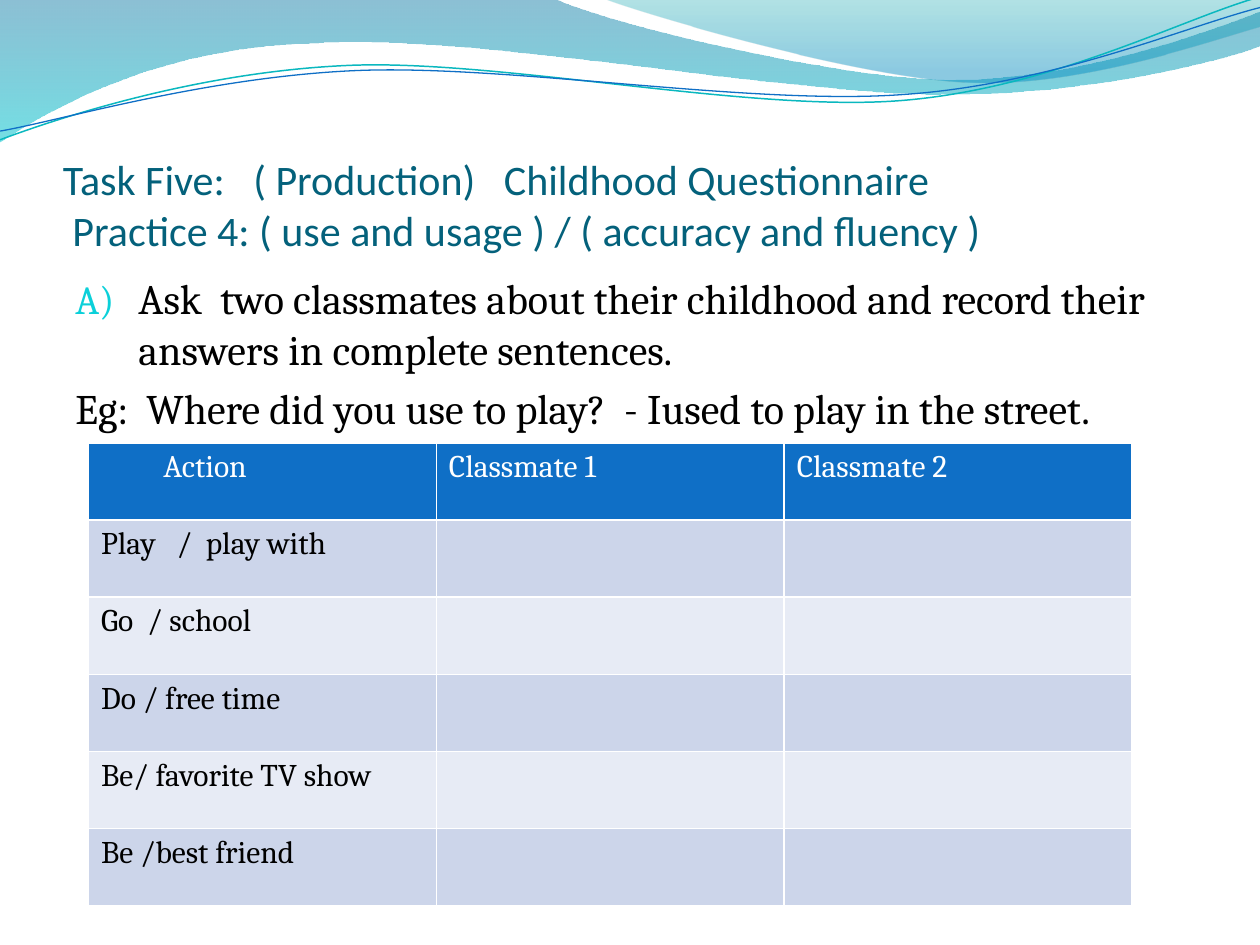
from lxml.etree import SubElement
from pptx import Presentation
from pptx.dml.color import RGBColor as Rgb
from pptx.enum.text import MSO_ANCHOR as Anchor
from pptx.oxml.ns import qn
from pptx.util import Pt

COLORS = {
    "title": "04617B", "ink": "000000", "white": "FFFFFF", "number": "0BD0D9",
    "header": "0F6FC6", "odd": "CCD5EA", "even": "E7EBF5", "teal": "0AB8BF",
    "deep_blue": "0074A1", "cyan": "00C6CF", "sea": "00A1A9", "sky": "008BBF",
}


def write(paragraph, text, font="Cambria", size=24, color="ink"):
    """Fill a paragraph with formatted text; a vertical tab breaks the line."""
    paragraph.text = text
    for run in paragraph.runs:
        run.font.name, run.font.size = font, Pt(size)
        run.font.color.rgb = Rgb.from_string(COLORS[color])


class Board:
    """Holds the style and the current slide, and draws each kind of element."""

    def __init__(self, slide, colors):
        self.slide, self.colors = slide, colors

    def rgb(self, name):
        return Rgb.from_string(self.colors[name])

    def outline(self, start, segments, close):
        """Draw lines (one point each) and cubic curves (three points each)."""
        builder = self.slide.shapes.build_freeform(*map(Pt, start), scale=1.0)
        builder.add_line_segments(
            [(Pt(x), Pt(y)) for segment in segments for x, y in segment], close=close)
        shape = builder.convert_to_shape()
        shape.shadow.inherit = False
        vertices = iter(list(shape._element.iter(qn("a:lnTo"))))
        for segment in segments:
            first, *others = [next(vertices) for _ in segment]
            if others:
                first.tag = qn("a:cubicBezTo")
            for vertex in others:
                first.append(vertex[0])
                vertex.getparent().remove(vertex)
        return shape

    def wave(self, start, segments, stops):
        shape = self.outline(start, segments, True)
        shape.line.fill.background()
        shape.fill.gradient()
        shape.fill.gradient_angle = 270
        for stop, (position, color, alpha) in zip(shape.fill.gradient_stops, stops):
            stop.position = position
            stop.color.rgb = self.rgb(color)
            hue = stop._gs.find(qn("a:srgbClr"))
            SubElement(hue, qn("a:alpha"), val=str(alpha * 1000))

    def strand(self, start, segments, color, width):
        shape = self.outline(start, segments, False)
        shape.fill.background()
        shape.line.color.rgb = self.rgb(color)
        shape.line.width = Pt(width)

    def text_box(self, left, top, width, height):
        frame = self.slide.shapes.add_textbox(Pt(left), Pt(top), Pt(width), Pt(height)).text_frame
        frame.word_wrap = True
        return frame

    def title(self, text, *place):
        frame = self.text_box(*place)
        frame.vertical_anchor = Anchor.BOTTOM
        frame.margin_left = frame.margin_right = frame.margin_bottom = Pt(0)
        write(frame.paragraphs[0], text, font="Calibri", color="title")

    def instructions(self, items, *place):
        frame = self.text_box(*place)
        for index, (text, numbered) in enumerate(items):
            paragraph = frame.add_paragraph() if index else frame.paragraphs[0]
            write(paragraph, text)
            paragraph.space_before = Pt(4.8)
            props = paragraph._p.get_or_add_pPr()
            props.set("marL", str(Pt(36)))
            props.set("indent", str(Pt(-36)))
            if numbered:
                tint = SubElement(props, qn("a:buClr"))
                SubElement(tint, qn("a:srgbClr"), val=self.colors["number"])
                SubElement(props, qn("a:buSzPct"), val="95000")
                SubElement(props, qn("a:buAutoNum"), type="alphaUcParenR")

    def border(self, cell):
        props = cell._tc.get_or_add_tcPr()
        for side in "LRTB":
            edge = SubElement(props, qn(f"a:ln{side}"), w=str(Pt(1)))
            paint = SubElement(edge, qn("a:solidFill"))
            SubElement(paint, qn("a:srgbClr"), val=self.colors["white"])

    def questionnaire(self, headings, actions, *place):
        rows = [headings] + [(action, "", "") for action in actions]
        table = self.slide.shapes.add_table(
            len(rows), len(headings), *[Pt(length) for length in place]).table
        for r, row in enumerate(rows):
            fill = ("odd" if r % 2 else "even") if r else "header"
            for c, text in enumerate(row):
                cell = table.cell(r, c)
                self.border(cell)
                cell.fill.solid()
                cell.fill.fore_color.rgb = self.rgb(fill)
                write(cell.text_frame.paragraphs[0], text, size=18,
                      color="ink" if r else "white")
        table.cell(0, 0).margin_left = Pt(42.7)


def main():
    """Build the questionnaire slide."""
    deck = Presentation()
    deck.slide_width, deck.slide_height = Pt(720), Pt(540)
    board = Board(deck.slides.add_slide(deck.slide_layouts[6]), COLORS)

    board.wave((0, 0), [
        [(316.8, -0.7)],
        [(342.7, 12.2), (478.1, 45.4), (545.8, 45.4)],
        [(614.2, 45.4), (689.8, 18.7), (720, 6.5)],
        [(720.7, 25.9)],
        [(707.8, 31.7), (626.4, 54.7), (537.1, 54)],
        [(447.8, 54), (275, 20.2), (185, 24.5)],
        [(92.9, 25.9), (33.1, 59.8), (-0.7, 81.4)],
    ], [(0, "deep_blue", 45), (1, "cyan", 55)])
    board.wave((344.9, -0.7), [
        [(366.5, 7.9), (491, 44.6), (553.7, 46.8)],
        [(616.3, 49.7), (691.9, 23), (720, 15.1)],
        [(720, 0)],
    ], [(0, "sea", 30), (0.8, "sky", 45)])
    board.strand((0, 79.9), [
        [(34.6, 67), (113.8, 41), (199.4, 37.4)],
        [(284.4, 33.8), (427, 64.1), (513.4, 57.6)],
        [(599.8, 51.1), (675.4, 10.8), (718.6, -1.4)],
    ], "teal", 0.85)
    board.strand((0, 74.9), [
        [(33.8, 69.1), (118.1, 43.9), (203.8, 40.3)],
        [(290.2, 36.7), (429.8, 60.5), (516.2, 54)],
        [(601.9, 48.2), (677.5, 15.1), (720, 4.3)],
    ], "header", 0.75)

    board.title("Task Five:   ( Production)   Childhood Questionnaire\v"
                " Practice 4: ( use and usage ) / ( accuracy and fluency )",
                36, 55.5, 648, 90)
    board.instructions([
        ("Ask  two classmates about their childhood and record their "
         "answers in complete sentences.", True),
        ("Eg:  Where did you use to play?  - Iused to play in the street.", False),
    ], 36, 152.4, 648, 345.6)
    board.questionnaire(
        ("Action", "Classmate 1", "Classmate 2"),
        ("Play   /  play with", "Go  / school", "Do / free time",
         "Be/ favorite TV show", "Be /best friend"),
        50.6, 253.1, 596.3, 264.5)
    deck.save("out.pptx")


if __name__ == "__main__":
    main()
